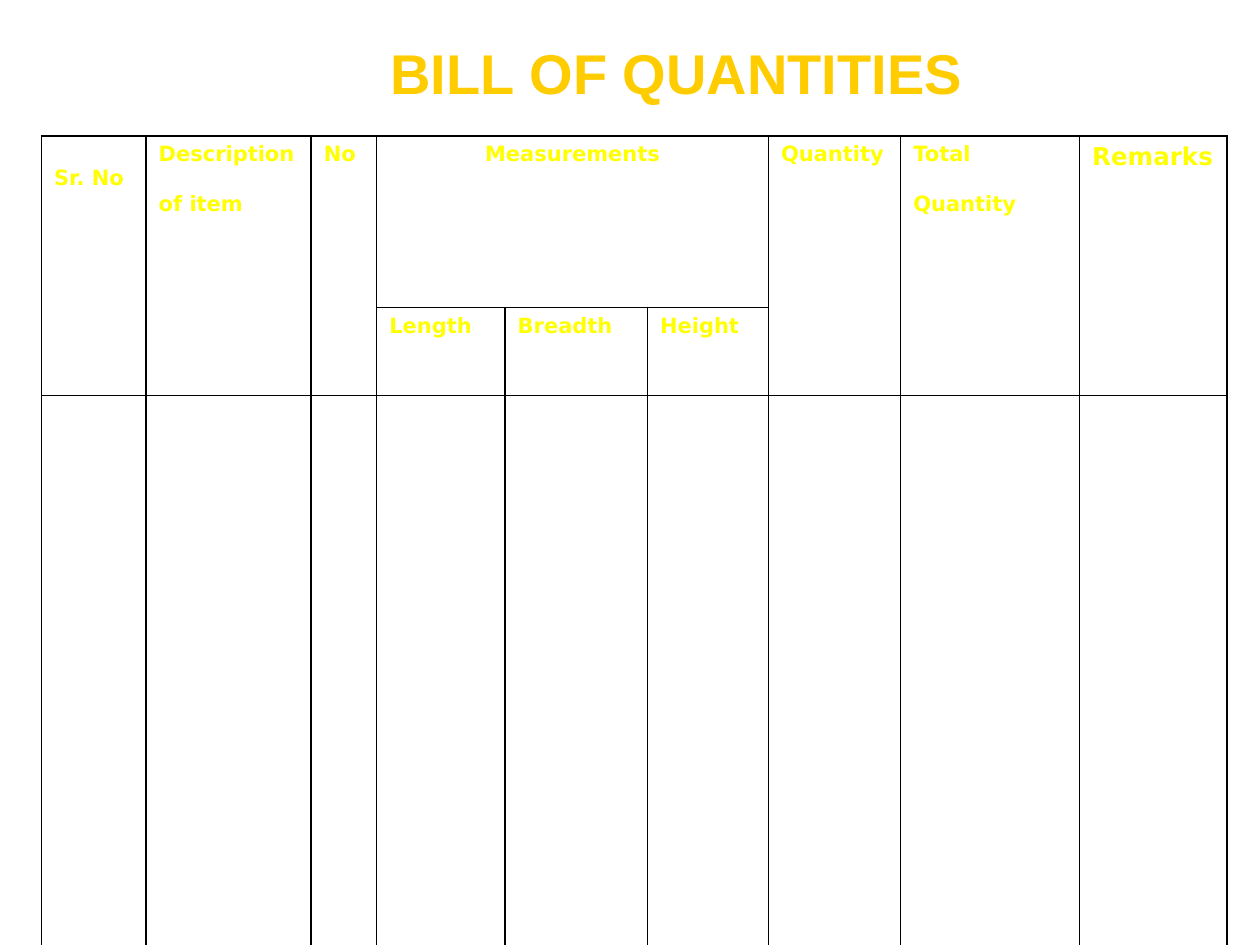
from dataclasses import dataclass

from lxml import etree
from pptx import Presentation
from pptx.dml.color import RGBColor
from pptx.enum.text import MSO_ANCHOR, PP_ALIGN
from pptx.oxml.ns import qn
from pptx.util import Inches, Pt

LEFT, CENTER = PP_ALIGN.LEFT, PP_ALIGN.CENTER
MIDDLE = MSO_ANCHOR.MIDDLE


@dataclass(frozen=True)
class Theme:
    gold: str = "FFCC00"
    yellow: str = "FFFF00"
    black: str = "000000"
    title_font: str = "Arial"
    head_font: str = "DejaVu Sans"
    title: int = 32
    head: int = 12
    large: int = 14
    gap: int = 14
    border: int = 1


THEME = Theme()
COLS = (0.83, 1.31, 0.52, 1.02, 1.13, 0.96, 1.05, 1.42, 1.17)
ROWS = (1.36, 0.7, 4.42)


@dataclass(frozen=True)
class Head:
    """A heading cell: grid place, text and the rows and columns it spans."""
    row: int
    col: int
    text: str
    rows: int = 1
    cols: int = 1
    size: int = THEME.head
    align: PP_ALIGN = LEFT
    top: float = 0.05


HEADS = (
    Head(0, 0, "Sr. No", rows=2, top=0.24),
    Head(0, 1, "Description\nof item", rows=2),
    Head(0, 2, "No", rows=2),
    Head(0, 3, "Measurements", cols=3, align=CENTER),
    Head(0, 6, "Quantity", rows=2),
    Head(0, 7, "Total\nQuantity", rows=2),
    Head(0, 8, "Remarks", rows=2, size=THEME.large),
    Head(1, 3, "Length"),
    Head(1, 4, "Breadth"),
    Head(1, 5, "Height"),
)


def style(para, font: str, size: int, color: str, align: PP_ALIGN) -> None:
    para.alignment = align
    for run in para.runs:
        run.font.name = font
        run.font.size = Pt(size)
        run.font.bold = True
        run.font.color.rgb = RGBColor.from_string(color)


def add_title(slide, text: str) -> None:
    box = slide.shapes.add_textbox(
        Inches(2.58), Inches(0.25), Inches(5.58), Inches(0.64))
    frame = box.text_frame
    frame.word_wrap = True
    frame.vertical_anchor = MIDDLE
    frame.text = text
    style(frame.paragraphs[0], THEME.title_font, THEME.title, THEME.gold, CENTER)


def outline(cell) -> None:
    """Give the cell four solid borders and no fill."""
    props = cell._tc.get_or_add_tcPr()
    for side in ("a:lnL", "a:lnR", "a:lnT", "a:lnB"):
        line = etree.SubElement(props, qn(side), w=str(Pt(THEME.border)))
        fill = etree.SubElement(line, qn("a:solidFill"))
        etree.SubElement(fill, qn("a:srgbClr"), val=THEME.black)
    cell.fill.background()


def add_grid(slide):
    table = slide.shapes.add_table(
        len(ROWS), len(COLS), Inches(0.33), Inches(1.08),
        Inches(sum(COLS)), Inches(sum(ROWS))).table
    table.first_row = table.horz_banding = False
    for col, width in zip(table.columns, COLS):
        col.width = Inches(width)
    for row, height in zip(table.rows, ROWS):
        row.height = Inches(height)
    for cell in table.iter_cells():
        outline(cell)
    return table


def add_head(table, head: Head) -> None:
    cell = table.cell(head.row, head.col)
    if head.rows * head.cols > 1:
        cell.merge(table.cell(head.row + head.rows - 1,
                              head.col + head.cols - 1))
    cell.margin_top = Inches(head.top)
    cell.text_frame.text = head.text
    for i, para in enumerate(cell.text_frame.paragraphs):
        style(para, THEME.head_font, head.size, THEME.yellow, head.align)
        if i:
            para.space_before = Pt(THEME.gap)


def main() -> None:
    deck = Presentation()
    deck.slide_width, deck.slide_height = Inches(10), Inches(7.5)
    slide = deck.slides.add_slide(deck.slide_layouts[6])
    add_title(slide, "BILL OF QUANTITIES")
    table = add_grid(slide)
    for head in HEADS:
        add_head(table, head)
    deck.save("out.pptx")


if __name__ == "__main__":
    main()
